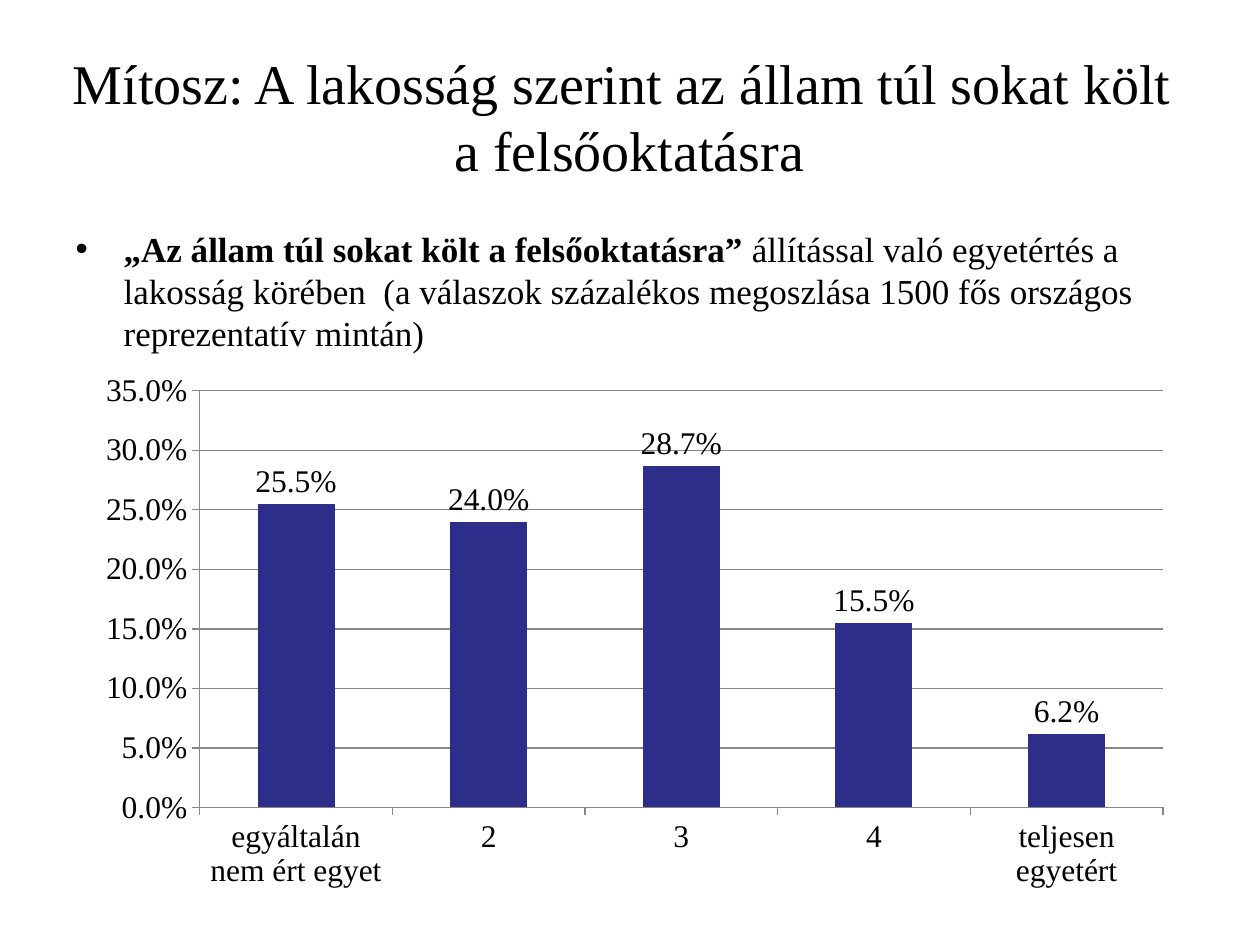
import lxml.etree
import pptx
import pptx.chart.data
import pptx.dml.color
import pptx.enum.chart
import pptx.enum.text
import pptx.oxml.ns
import pptx.util

PX = 914400 // 126
FONT = "Times New Roman"
BLACK, BAR, GRID = "000000", "2D2D8A", "878787"
PERCENT = "0.0%"

TITLE_LINES = ["Mítosz: A lakosság szerint az állam túl sokat költ ", "a felsőoktatásra"]
BODY_SPANS = [
    ("„Az állam túl sokat költ a felsőoktatásra” ", True),
    ("állítással való egyetértés a lakosság körében  (a válaszok százalékos "
     "megoszlása 1500 fős országos reprezentatív mintán)", False),
]
ANSWERS = [
    ("egyáltalán nem ért egyet", 0.255),
    ("2", 0.24),
    ("3", 0.287),
    ("4", 0.155),
    ("teljesen egyetért", 0.062),
]
TITLE_BOX = (34, 37, 1191, 158)
BODY_BOX = (63, 221, 1134, 688)
CHART_BOX = (84, 363, 1101, 536)
BULLET_INDENT = 48


def color(value):
    return pptx.dml.color.RGBColor.from_string(value)


def emu(box):
    return [length * PX for length in box]


def style(font, size, bold=False):
    font.name = FONT
    font.size = pptx.util.Pt(size)
    font.bold = bold
    font.color.rgb = color(BLACK)


def add_span(para, text, size, bold=False):
    span = para.add_run()
    span.text = text
    style(span.font, size, bold)


def place(holder, box, anchor):
    holder.left, holder.top, holder.width, holder.height = emu(box)
    frame = holder.text_frame
    frame.word_wrap = True
    frame.auto_size = pptx.enum.text.MSO_AUTO_SIZE.NONE
    frame.vertical_anchor = anchor
    return frame.paragraphs[0]


def add_bullet(para):
    properties = para._p.get_or_add_pPr()
    properties.set("marL", str(BULLET_INDENT * PX))
    properties.set("indent", str(-BULLET_INDENT * PX))
    bullet = lxml.etree.SubElement(properties, pptx.oxml.ns.qn("a:buChar"))
    bullet.set("char", "•")


def add_title(page):
    para = place(page.shapes.title, TITLE_BOX, pptx.enum.text.MSO_ANCHOR.MIDDLE)
    para.alignment = pptx.enum.text.PP_ALIGN.CENTER
    for number, line in enumerate(TITLE_LINES):
        if number:
            para.add_line_break()
        add_span(para, line, 32)


def add_body(page):
    para = place(page.placeholders[1], BODY_BOX, pptx.enum.text.MSO_ANCHOR.TOP)
    para.space_before = pptx.util.Pt(4)
    add_bullet(para)
    for text, bold in BODY_SPANS:
        add_span(para, text, 20, bold)


def add_answer_chart(page):
    data = pptx.chart.data.CategoryChartData(number_format=PERCENT)
    data.categories = [answer for answer, share in ANSWERS]
    data.add_series("Series 1", [share for answer, share in ANSWERS])
    kind = pptx.enum.chart.XL_CHART_TYPE.COLUMN_CLUSTERED
    chart = page.shapes.add_chart(kind, *emu(CHART_BOX), data).chart
    chart.has_legend = False
    chart.has_title = False
    style(chart.font, 18)

    values = chart.value_axis
    values.minimum_scale, values.maximum_scale, values.major_unit = 0, 0.35, 0.05
    values.has_major_gridlines = True
    values.tick_labels.number_format = PERCENT
    values.tick_labels.number_format_is_linked = False
    for axis in (values, chart.category_axis):
        axis.major_tick_mark = pptx.enum.chart.XL_TICK_MARK.OUTSIDE
        axis.format.line.color.rgb = color(GRID)
    values.major_gridlines.format.line.color.rgb = color(GRID)

    plot = chart.plots[0]
    plot.gap_width = 150
    plot.vary_by_categories = False
    fill = plot.series[0].format.fill
    fill.solid()
    fill.fore_color.rgb = color(BAR)
    plot.has_data_labels = True
    labels = plot.data_labels
    labels.show_value = True
    labels.number_format = PERCENT
    labels.number_format_is_linked = False
    labels.position = pptx.enum.chart.XL_LABEL_POSITION.OUTSIDE_END
    style(labels.font, 18)


def main():
    deck = pptx.Presentation()
    deck.slide_width, deck.slide_height = emu((1260, 945))
    page = deck.slides.add_slide(deck.slide_layouts[1])
    add_title(page)
    add_body(page)
    add_answer_chart(page)
    deck.save("out.pptx")


if __name__ == "__main__":
    main()
